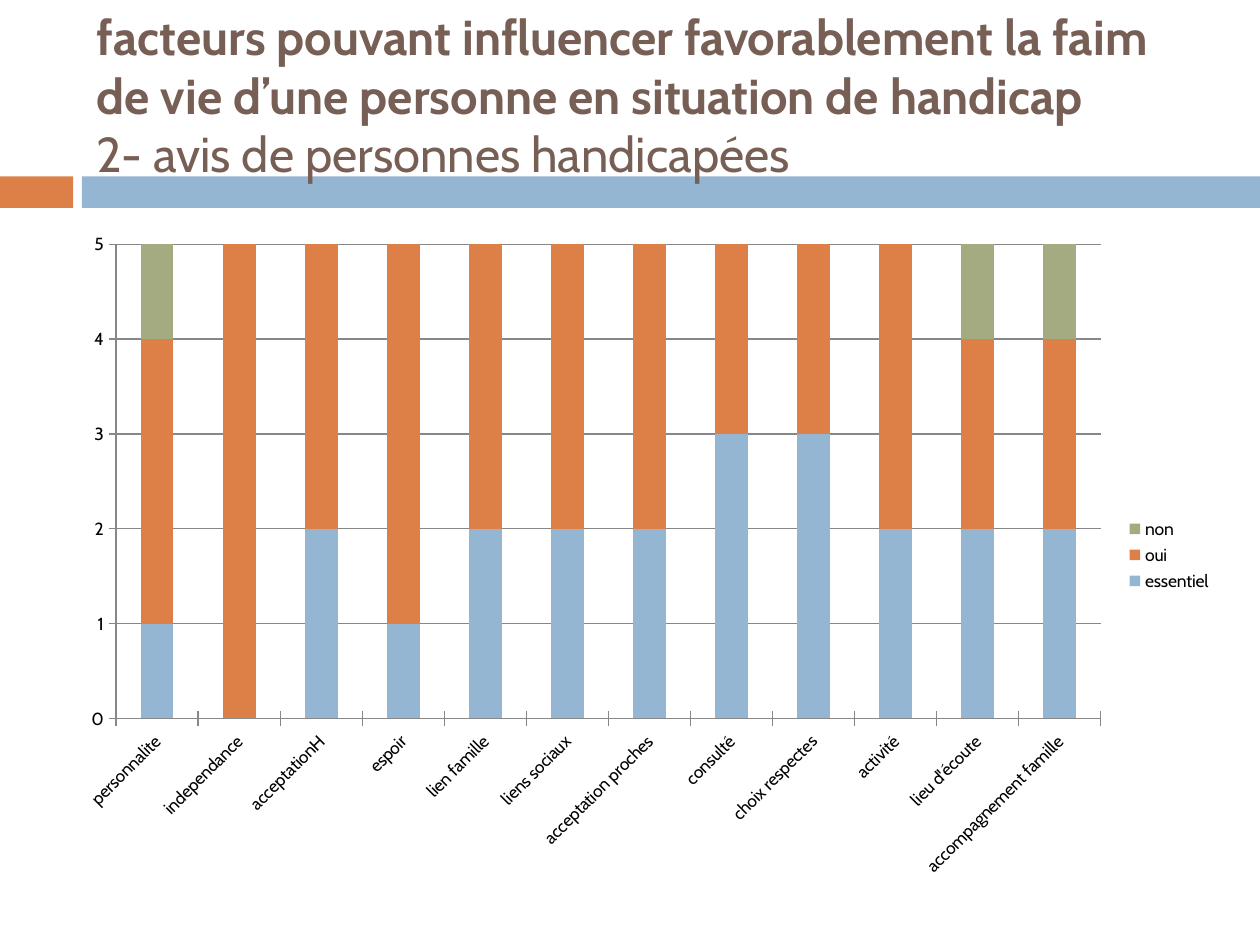
from pptx import Presentation
from pptx.chart.data import CategoryChartData
from pptx.dml.color import RGBColor
from pptx.enum.chart import XL_CHART_TYPE, XL_LEGEND_POSITION, XL_TICK_MARK
from pptx.enum.shapes import MSO_SHAPE
from pptx.enum.text import MSO_ANCHOR, PP_ALIGN
from pptx.util import Inches, Pt

COLORS = {
    "blue": "94B6D2",
    "orange": "DD8047",
    "green": "A5AB81",
    "title": "775F55",
    "text": "000000",
    "axis": "878787",
}

CATEGORIES = [
    "personnalite", "independance", "acceptationH", "espoir",
    "lien famille", "liens sociaux", "acceptation proches", "consulté",
    "choix respectes", "activité", "lieu d'écoute", "accompagnement famille",
]
ANSWERS = {
    "essentiel": ("blue", [1, 0, 2, 1, 2, 2, 2, 3, 3, 2, 2, 2]),
    "oui": ("orange", [3, 5, 3, 4, 3, 3, 3, 2, 2, 3, 2, 2]),
    "non": ("green", [1, 0, 0, 0, 0, 0, 0, 0, 0, 0, 1, 1]),
}


class SlideBuilder:
    """Places elements on a grid of 100 columns and 75 rows."""

    font_name = "Cabin"
    columns, rows = 100, 75

    def __init__(self, presentation):
        self.cell_width = presentation.slide_width / self.columns
        self.cell_height = presentation.slide_height / self.rows
        self.slide = presentation.slides.add_slide(presentation.slide_layouts[6])

    def box(self, column, row, width, height):
        return (
            round(column * self.cell_width), round(row * self.cell_height),
            round(width * self.cell_width), round(height * self.cell_height),
        )

    def color(self, name):
        return RGBColor.from_string(COLORS[name])

    def style(self, font, size, color):
        font.name = self.font_name
        font.size = Pt(size)
        font.color.rgb = self.color(color)

    def band(self, cells, color):
        shape = self.slide.shapes.add_shape(MSO_SHAPE.RECTANGLE, *self.box(*cells))
        shape.shadow.inherit = False
        shape.fill.solid()
        shape.fill.fore_color.rgb = self.color(color)
        shape.line.fill.background()

    def title(self, cells, heading, subtitle):
        text_frame = self.slide.shapes.add_textbox(*self.box(*cells)).text_frame
        text_frame.word_wrap = True
        text_frame.vertical_anchor = MSO_ANCHOR.MIDDLE
        paragraph = text_frame.paragraphs[0]
        paragraph.text = f"{heading}\v{subtitle}"
        paragraph.alignment = PP_ALIGN.LEFT
        for run, bold in zip(paragraph.runs, (True, False)):
            self.style(run.font, 28, "title")
            run.font.bold = bold

    def stacked_columns(self, cells, categories, answers):
        chart_data = CategoryChartData(number_format="#,##0")
        chart_data.categories = categories
        for name, (_, values) in answers.items():
            chart_data.add_series(name, values)
        chart = self.slide.shapes.add_chart(
            XL_CHART_TYPE.COLUMN_STACKED, *self.box(*cells), chart_data
        ).chart
        self.style(chart.font, 10, "text")
        chart.has_title = False
        chart.has_legend = True
        chart.legend.position = XL_LEGEND_POSITION.RIGHT
        chart.legend.include_in_layout = False

        plot = chart.plots[0]
        plot.vary_by_categories = False
        plot.overlap = 100
        plot.gap_width = 150
        for series, (color, _) in zip(plot.series, answers.values()):
            series.format.fill.solid()
            series.format.fill.fore_color.rgb = self.color(color)

        value_axis, category_axis = chart.value_axis, chart.category_axis
        value_axis.maximum_scale = 5
        value_axis.has_major_gridlines = True
        value_axis.tick_labels.number_format = "#,##0"
        value_axis.tick_labels.number_format_is_linked = False
        for axis in (value_axis, category_axis):
            axis.major_tick_mark = XL_TICK_MARK.CROSS
            self.style(axis.tick_labels.font, 10, "text")
        for line in (value_axis.format.line, category_axis.format.line,
                     value_axis.major_gridlines.format.line):
            line.color.rgb = self.color("axis")
            line.width = Pt(0.75)
        # Slant the category labels upwards by 45 degrees
        category_axis._element.txPr.bodyPr.set("rot", "-2700000")


def main():
    presentation = Presentation()
    presentation.slide_width, presentation.slide_height = Inches(10), Inches(7.5)
    builder = SlideBuilder(presentation)
    builder.band((0, 14, 5.8, 2.5), "orange")
    builder.band((6.5, 14, 93.5, 2.5), "blue")
    builder.title(
        (6.7, 2.1, 89.2, 10.8),
        "facteurs pouvant influencer favorablement la faim de vie "
        "d’une personne en situation de handicap",
        "2- avis de personnes handicapées",
    )
    builder.stacked_columns((5, 17.5, 92.2, 53.1), CATEGORIES, ANSWERS)
    presentation.save("out.pptx")


if __name__ == "__main__":
    main()
